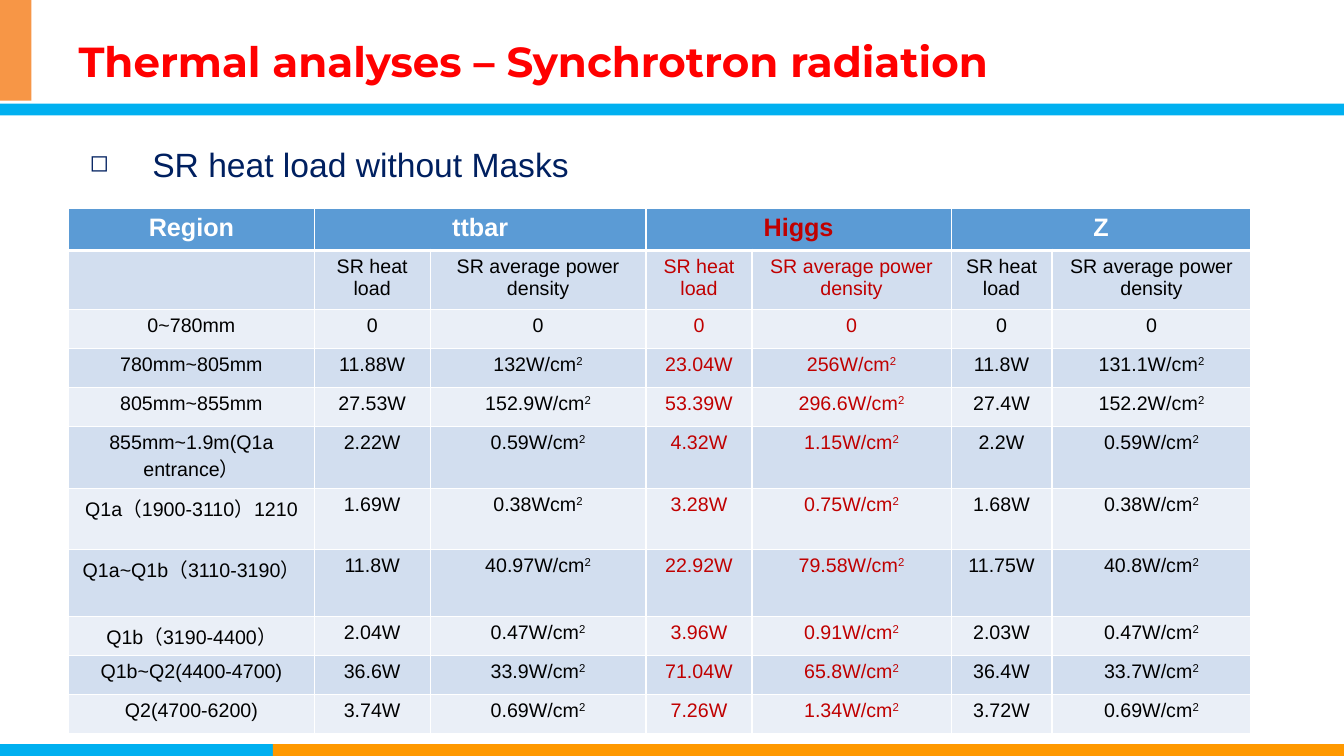
from lxml import etree
from pptx import Presentation
from pptx import util as u
from pptx.dml import color
from pptx.enum import shapes, text
from pptx.oxml import ns

TITLE = "Thermal analyses – Synchrotron radiation"
SUBTITLE = "SR heat load without Masks"
BARS = [
    (0, 18.75, 33.87, 0.3, "00B0F0"),
    (6.88, 18.75, 26.99, 0.3, "FF9900"),
    (0, 2.61, 33.87, 0.3, "00B0F0"),
    (0, 0, 0.79, 2.54, "F79646"),
]
MODES = ["ttbar", "Higgs", "Z"]
QUANTITIES = ["SR heat load", "SR average power density"]
REGIONS = [
    ("0~780mm", "0", "0", "0", "0", "0", "0"),
    ("780mm~805mm", "11.88W", "132W/cm^2", "23.04W", "256W/cm^2", "11.8W", "131.1W/cm^2"),
    ("805mm~855mm", "27.53W", "152.9W/cm^2", "53.39W", "296.6W/cm^2", "27.4W", "152.2W/cm^2"),
    ("855mm~1.9m(Q1a entrance）", "2.22W", "0.59W/cm^2", "4.32W", "1.15W/cm^2", "2.2W", "0.59W/cm^2"),
    ("Q1a（1900-3110）1210", "1.69W", "0.38Wcm^2", "3.28W", "0.75W/cm^2", "1.68W", "0.38W/cm^2"),
    ("Q1a~Q1b（3110-3190）", "11.8W", "40.97W/cm^2", "22.92W", "79.58W/cm^2", "11.75W", "40.8W/cm^2"),
    ("Q1b（3190-4400）", "2.04W", "0.47W/cm^2", "3.96W", "0.91W/cm^2", "2.03W", "0.47W/cm^2"),
    ("Q1b~Q2(4400-4700)", "36.6W", "33.9W/cm^2", "71.04W", "65.8W/cm^2", "36.4W", "33.7W/cm^2"),
    ("Q2(4700-6200)", "3.74W", "0.69W/cm^2", "7.26W", "1.34W/cm^2", "3.72W", "0.69W/cm^2"),
]
COLUMN_WIDTHS = [6.19, 2.92, 5.44, 2.67, 5.02, 2.54, 5.02]
ROW_HEIGHTS = [1.05, 1.49, 0.98, 0.98, 0.98, 1.57, 1.54, 1.69, 0.98, 0.98, 0.98]
HEADER_FILL, BAND_FILLS = "5B9BD5", ["EAEFF7", "D2DEEF"]
WHITE, BLACK, HIGHLIGHT = "FFFFFF", "000000", "C00000"
HIGGS_COLUMNS = (3, 4)


def rgb(value):
    return color.RGBColor.from_string(value)


def write(frame, content, size, hue, font="Arial", bold=False, align=None):
    paragraph = frame.paragraphs[0]
    paragraph.alignment = align
    for index, part in enumerate(content.split("^")):
        run = paragraph.add_run()
        run.text = part
        run.font.name = font
        run.font.size = u.Pt(size)
        run.font.bold = bold
        run.font.color.rgb = rgb(hue)
        if index:
            run.font._element.set("baseline", "30000")
    return paragraph


def add_bar(slide, left, top, width, height, fill):
    shape = slide.shapes.add_shape(
        shapes.MSO_SHAPE.RECTANGLE, u.Cm(left), u.Cm(top), u.Cm(width), u.Cm(height))
    shape.shadow.inherit = False
    shape.fill.solid()
    shape.fill.fore_color.rgb = rgb(fill)
    shape.line.fill.background()


def add_text_frame(slide, left, top, width, height, anchor):
    shape = slide.shapes.add_textbox(u.Cm(left), u.Cm(top), u.Cm(width), u.Cm(height))
    shape.text_frame.word_wrap = True
    shape.text_frame.vertical_anchor = anchor
    return shape.text_frame


def add_bullet(paragraph, symbol, indent, percent):
    properties = paragraph._p.get_or_add_pPr()
    properties.set("marL", str(u.Cm(indent)))
    properties.set("indent", str(-u.Cm(indent)))
    etree.SubElement(properties, ns.qn("a:buSzPct")).set("val", str(percent * 1000))
    etree.SubElement(properties, ns.qn("a:buChar")).set("char", symbol)


def style_cell(cell, fill, row):
    properties = cell._tc.get_or_add_tcPr()
    thick = {0: "lnB", 1: "lnT"}.get(row)
    for side in ("lnL", "lnR", "lnT", "lnB"):
        line = etree.SubElement(properties, ns.qn("a:" + side))
        line.set("w", str(u.Pt(3 if side == thick else 1)))
        solid = etree.SubElement(line, ns.qn("a:solidFill"))
        etree.SubElement(solid, ns.qn("a:srgbClr")).set("val", WHITE)
    cell.fill.solid()
    cell.fill.fore_color.rgb = rgb(fill)


def add_heat_table(slide):
    headings = ["Region"] + [label for mode in MODES for label in (mode, "")]
    rows = [headings, [""] + QUANTITIES * len(MODES)] + REGIONS
    table = slide.shapes.add_table(
        len(rows), len(COLUMN_WIDTHS), u.Cm(1.73), u.Cm(5.26),
        u.Cm(sum(COLUMN_WIDTHS)), u.Cm(sum(ROW_HEIGHTS))).table
    table.first_row = table.horz_banding = False
    for column, width in zip(table.columns, COLUMN_WIDTHS):
        column.width = u.Cm(width)
    for r, (values, height) in enumerate(zip(rows, ROW_HEIGHTS)):
        table.rows[r].height = u.Cm(height)
        for c, value in enumerate(values):
            cell = table.cell(r, c)
            style_cell(cell, BAND_FILLS[r % 2] if r else HEADER_FILL, r)
            hue = HIGHLIGHT if c in HIGGS_COLUMNS else BLACK if r else WHITE
            if value:
                write(cell.text_frame, value, 14 if r else 18, hue,
                      bold=r == 0, align=text.PP_ALIGN.CENTER)
    for c in range(1, len(COLUMN_WIDTHS), 2):
        table.cell(0, c).merge(table.cell(0, c + 1))


def main():
    presentation = Presentation()
    presentation.slide_width, presentation.slide_height = u.Cm(33.87), u.Cm(19.05)
    slide = presentation.slides.add_slide(presentation.slide_layouts[6])
    for bar in BARS:
        add_bar(slide, *bar)
    frame = add_text_frame(slide, 2.01, 3.14, 19.91, 2.13, text.MSO_ANCHOR.MIDDLE)
    paragraph = write(frame, SUBTITLE, 24, "002060")
    paragraph.line_spacing = 0.9
    add_bullet(paragraph, "◻", 1.58, 70)
    add_heat_table(slide)
    frame = add_text_frame(slide, 1.73, 0.77, 30.2, 1.55, text.MSO_ANCHOR.TOP)
    write(frame, TITLE, 30, "FF0000", font="Montserrat", bold=True)
    presentation.save("out.pptx")


if __name__ == "__main__":
    main()
